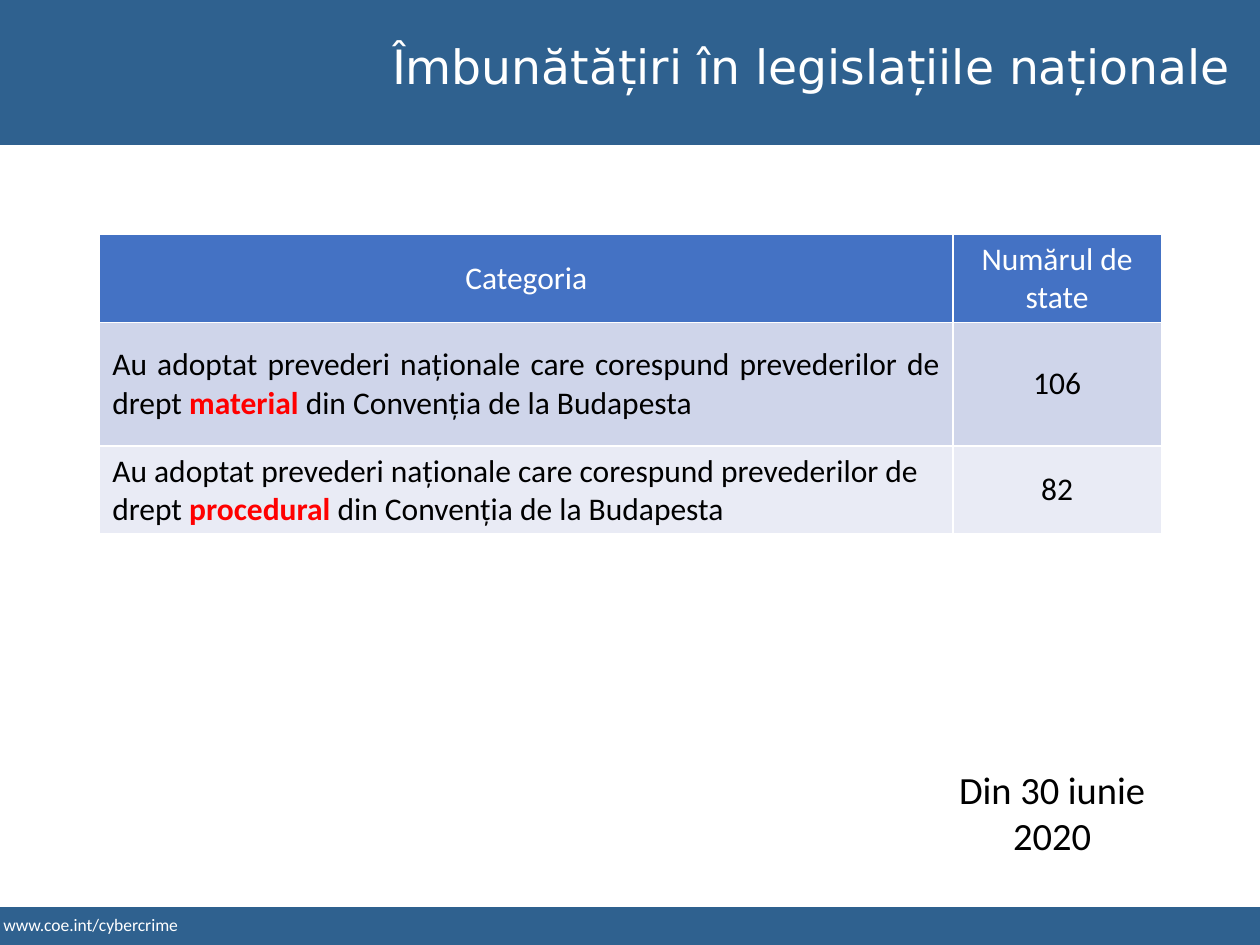
"""Build the slide on improvements in national legislation."""
from lxml.etree import SubElement
from pptx import Presentation
from pptx.dml.color import RGBColor as Rgb
from pptx.enum.shapes import MSO_SHAPE as Shape
from pptx.enum.text import MSO_ANCHOR as Anchor, PP_ALIGN as Align
from pptx.oxml.ns import qn
from pptx.util import Cm, Pt

WHITE = Rgb(0xFF, 0xFF, 0xFF)
BLACK = Rgb(0x00, 0x00, 0x00)
RED = Rgb(0xFF, 0x00, 0x00)
NAVY = Rgb(0x2F, 0x61, 0x8F)
BLUE = Rgb(0x44, 0x72, 0xC4)
PALE = Rgb(0xCF, 0xD5, 0xEA)
LIGHT = Rgb(0xE9, 0xEB, 0xF5)


def style(run, size, color, name="Calibri", bold=False):
    font = run.font
    font.size, font.name, font.bold = Pt(size), name, bold
    font.color.rgb = color


def edge(cell):
    props = cell._tc.get_or_add_tcPr()
    for i, side in enumerate(("a:lnL", "a:lnR", "a:lnT", "a:lnB")):
        line = props.makeelement(qn(side), {"w": str(Pt(1))})
        fill = SubElement(line, qn("a:solidFill"))
        SubElement(fill, qn("a:srgbClr"), val=str(WHITE))
        props.insert(i, line)


deck = Presentation()
deck.slide_width, deck.slide_height = Cm(25.4), Cm(19.05)
slide = deck.slides.add_slide(deck.slide_layouts[5])
shapes = slide.shapes

title = shapes.title
for i, (top, high) in enumerate(((-0.08, 3), (18.29, 0.81))):
    bar = shapes.add_shape(Shape.RECTANGLE, 0, Cm(top), Cm(25.4), Cm(high))
    bar.shadow.inherit = False
    bar.fill.solid()
    bar.fill.fore_color.rgb = NAVY
    bar.line.fill.background()
    title._element.addprevious(bar._element)

title.left, title.top, title.width, title.height = Cm(3.78), Cm(0.61), Cm(21.62), Cm(1.42)
frame = title.text_frame
frame.text = "Îmbunătățiri în legislațiile naționale"
frame.margin_right = Cm(0.6)
frame.vertical_anchor = Anchor.MIDDLE
frame.paragraphs[0].alignment = Align.RIGHT
style(frame.paragraphs[0].runs[0], 27, WHITE, "DejaVu Sans")

notes = (
    ("www.coe.int/cybercrime", (-0.18, 18.31, 8.94, 0.69), 10, WHITE, Align.LEFT),
    ("Din 30 iunie\n2020", (14.71, 15.32, 13, 2.13), 22, BLACK, Align.CENTER),
)
for text, place, size, color, align in notes:
    box = shapes.add_textbox(*map(Cm, place))
    box.text_frame.word_wrap = True
    box.text_frame.text = text
    for para in box.text_frame.paragraphs:
        para.alignment = align
        style(para.runs[0], size, color)

lead = "Au adoptat prevederi naționale care corespund prevederilor de drept "
tail = " din Convenția de la Budapesta"
rows = (
    (1.75, BLUE, WHITE, Align.CENTER, ("Categoria",), "Numărul de state"),
    (2.49, PALE, BLACK, Align.JUSTIFY, (lead, "material", tail), "106"),
    (1.75, LIGHT, BLACK, Align.LEFT, (lead, "procedural", tail), "82"),
)
table = shapes.add_table(3, 2, Cm(2.01), Cm(4.72), Cm(21.4), Cm(5.99)).table
table.columns[0].width, table.columns[1].width = Cm(17.2), Cm(4.2)
for r, (high, back, color, align, parts, count) in enumerate(rows):
    table.rows[r].height = Cm(high)
    for c, (texts, side) in enumerate(((parts, align), ((count,), Align.CENTER))):
        cell = table.cell(r, c)
        cell.fill.solid()
        cell.fill.fore_color.rgb = back
        cell.vertical_anchor = Anchor.MIDDLE
        edge(cell)
        para = cell.text_frame.paragraphs[0]
        para.alignment = side
        for i, text in enumerate(texts):
            run = para.add_run()
            run.text = text
            style(run, 18, RED if i == 1 else color, bold=i == 1)

deck.save("out.pptx")
